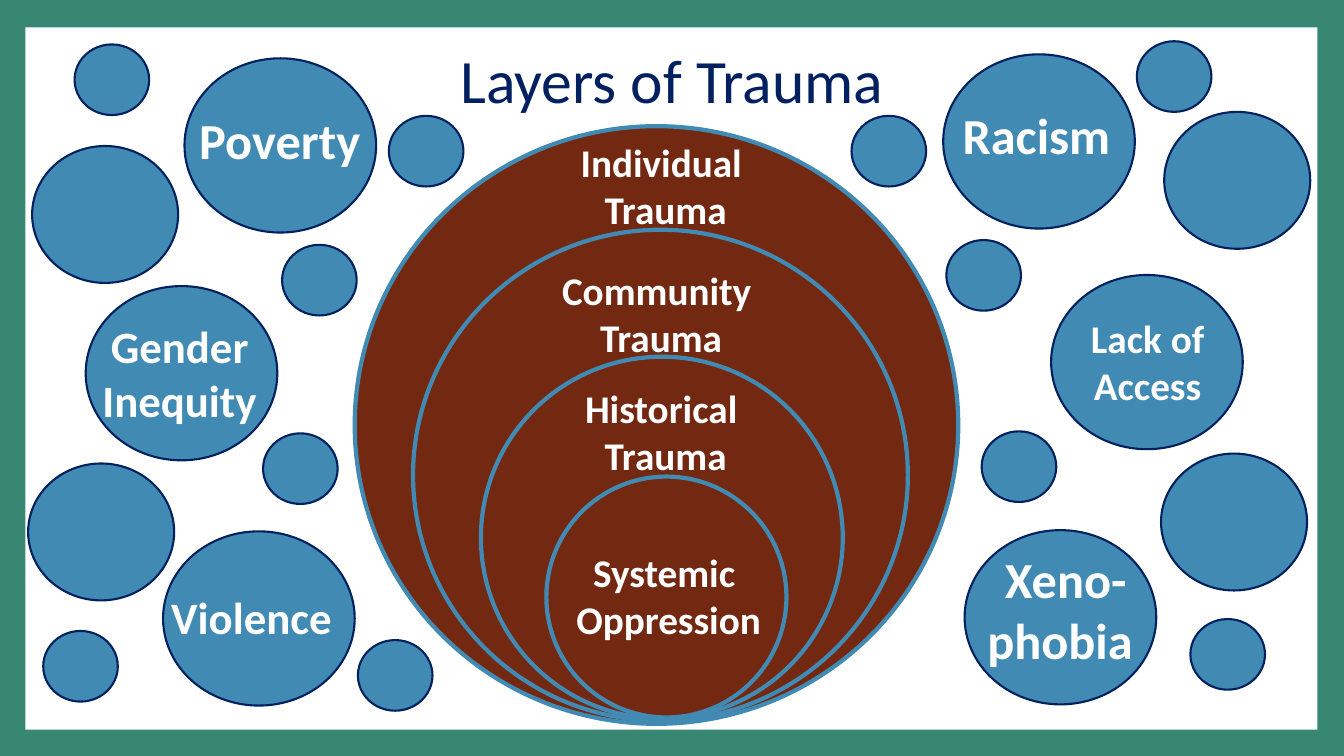
"""Build the Layers of Trauma slide: nested rings among labelled bubbles."""
from dataclasses import dataclass

from pptx import Presentation
from pptx.dml.color import RGBColor
from pptx.enum.shapes import MSO_SHAPE as Preset
from pptx.enum.text import MSO_ANCHOR as Anchor, MSO_AUTO_SIZE as AutoSize, PP_ALIGN as Align
from pptx.util import Cm, Pt

GREEN, WHITE, BROWN, BLUE, NAVY = "388773", "FFFFFF", "722811", "418AB3", "002060"
FONT = "Calibri"


@dataclass(frozen=True)
class Box:
    left: float
    top: float
    width: float
    height: float

    def lengths(self) -> tuple:
        return tuple(Cm(n) for n in (self.left, self.top, self.width, self.height))


@dataclass(frozen=True)
class Layer:
    text: str
    ring: Box
    label: Box
    fill: str | None = BROWN


@dataclass(frozen=True)
class Cause:
    text: str
    size: int
    bubble: tuple[float, float]
    label: Box


LAYERS = [
    Layer("Individual \nTrauma", Box(8.94, 3.18, 15.21, 15.06), Box(12.52, 3.35, 8.51, 2.64)),
    Layer("Community \nTrauma", Box(10.41, 5.79, 12.47, 12.37), Box(13.56, 6.58, 6.2, 2.64)),
    Layer("Historical \nTrauma", Box(12.12, 8.99, 9.12, 9.12), Box(14.35, 9.55, 4.85, 2.64)),
    Layer("Systemic \nOppression", Box(13.77, 12.01, 6.05, 6.07), Box(14.17, 13.69, 5.36, 2.64), None),
]

CAUSES = [
    Cause("Poverty", 36, (4.65, 1.47), Box(4.65, 2.62, 4.8, 1.8)),
    Cause("Gender Inequity", 32, (2.16, 7.21), Box(2.13, 7.9, 4.8, 3)),
    Cause("Violence", 32, (4.11, 13.39), Box(3.94, 14.73, 4.8, 1.63)),
    Cause("Racism", 36, (23.77, 1.37), Box(23.72, 2.49, 4.8, 1.8)),
    Cause("Lack of Access", 28, (26.49, 6.93), Box(26.52, 7.8, 4.8, 2.64)),
    Cause("Xeno-phobia ", 36, (24.31, 13.36), Box(24.46, 13.69, 4.8, 3.33)),
]

CAUSE_SIZE = (4.83, 4.39)
PLAIN_BUBBLES = {
    (3.68, 3.45): [(29.34, 2.82), (29.26, 11.43), (0.81, 3.68), (0.71, 11.68)],
    (1.88, 1.78): [
        (23.85, 6.05), (24.74, 10.87), (28.65, 1.04), (30, 15.6), (21.46, 2.92), (9.8, 2.92),
        (1.88, 1.12), (7.11, 6.17), (6.63, 10.92), (9.02, 16.13), (1.09, 15.9),
    ],
}


def paint(color_format, color: str) -> None:
    color_format.rgb = RGBColor.from_string(color)


def add_figure(shapes, preset, box: Box, fill: str | None, line: str | None = None, weight: float = 1.5):
    figure = shapes.add_shape(preset, *box.lengths())
    figure.shadow.inherit = False
    if fill:
        figure.fill.solid()
        paint(figure.fill.fore_color, fill)
    else:
        figure.fill.background()
    if line:
        paint(figure.line.color, line)
        figure.line.width = Pt(weight)
    else:
        figure.line.fill.background()
    return figure


def write(frame, text: str, *, size: int, color: str = WHITE, bold: bool = True,
          spacing: float | None = None) -> None:
    frame.word_wrap = True
    frame.text = text
    for paragraph in frame.paragraphs:
        paragraph.alignment = Align.CENTER
        paragraph.line_spacing = spacing
        for run in paragraph.runs:
            run.font.name, run.font.size, run.font.bold = FONT, Pt(size), bold
            paint(run.font.color, color)


def add_label(shapes, box: Box, text: str, size: int) -> None:
    frame = shapes.add_textbox(*box.lengths()).text_frame
    write(frame, text, size=size)
    frame.auto_size = AutoSize.SHAPE_TO_FIT_TEXT


def add_layer(shapes, layer: Layer) -> None:
    group = shapes.add_group_shape()
    add_figure(group.shapes, Preset.OVAL, layer.ring, layer.fill, BLUE, 3)
    add_label(group.shapes, layer.label, layer.text, 28)


def add_bubble(shapes, corner: tuple[float, float], size: tuple[float, float]) -> None:
    add_figure(shapes, Preset.OVAL, Box(*corner, *size), BLUE, NAVY)


def main() -> None:
    deck = Presentation()
    deck.slide_width, deck.slide_height = Cm(33.87), Cm(19.05)
    slide = deck.slides.add_slide(deck.slide_layouts[5])
    shapes = slide.shapes
    slide.background.fill.solid()
    paint(slide.background.fill.fore_color, GREEN)

    heading = shapes.title
    heading.left, heading.top, heading.width, heading.height = Box(2.57, 0.23, 28.73, 3.76).lengths()
    write(heading.text_frame, "Layers of Trauma", size=44, color=NAVY, bold=False, spacing=0.9)
    heading.text_frame.vertical_anchor = Anchor.MIDDLE

    panel = add_figure(shapes, Preset.RECTANGLE, Box(0.64, 0.69, 32.56, 17.7), WHITE)
    heading._element.addprevious(panel._element)

    for layer in LAYERS:
        add_layer(shapes, layer)
    for cause in CAUSES:
        add_bubble(shapes, cause.bubble, CAUSE_SIZE)
        add_label(shapes, cause.label, cause.text, cause.size)
    for size, corners in PLAIN_BUBBLES.items():
        for corner in corners:
            add_bubble(shapes, corner, size)

    deck.save("out.pptx")


if __name__ == "__main__":
    main()
